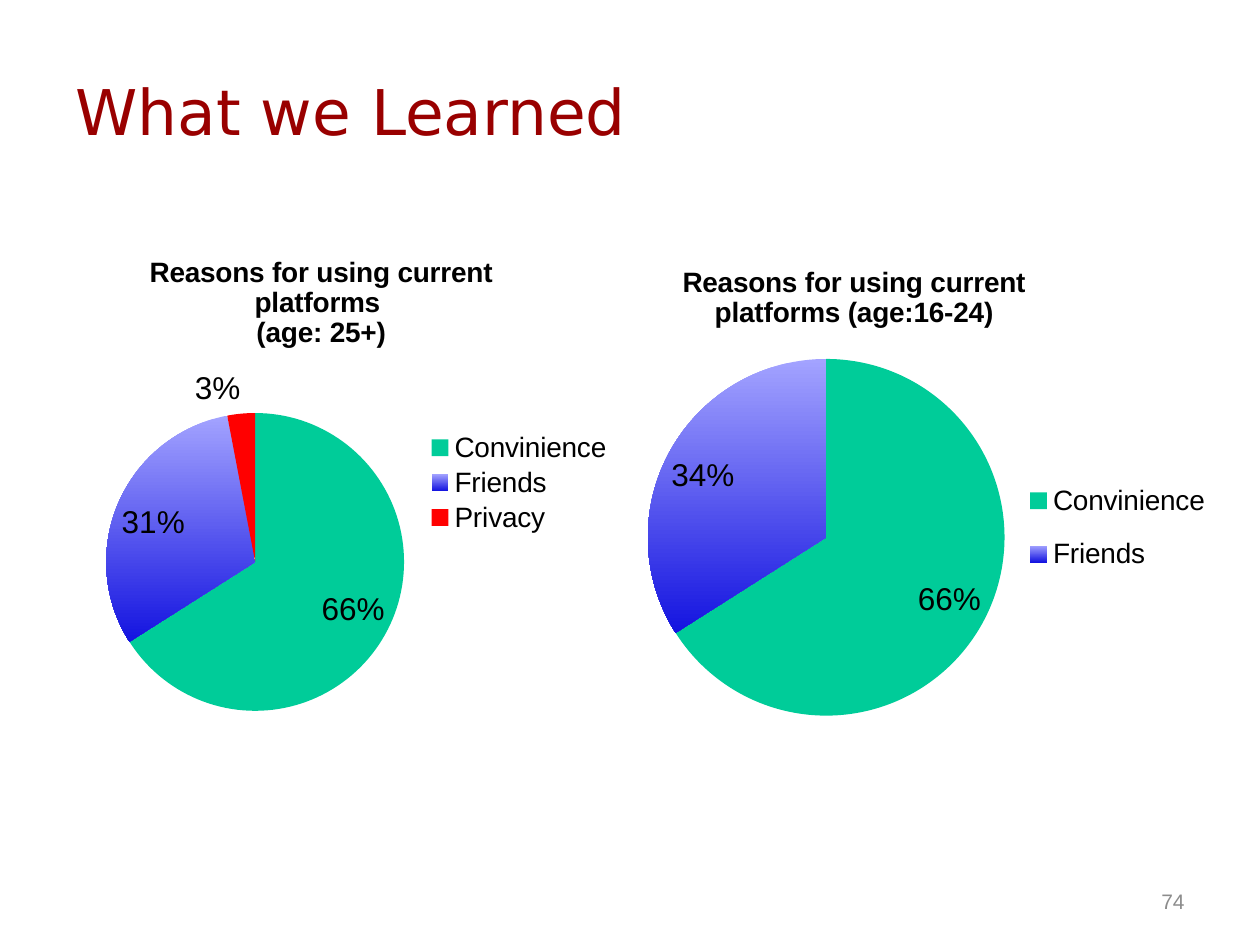
from dataclasses import dataclass
from typing import Optional

from lxml.etree import SubElement
from pptx import Presentation
from pptx.chart.data import CategoryChartData
from pptx.dml.color import RGBColor
from pptx.enum.chart import XL_CHART_TYPE, XL_LABEL_POSITION, XL_LEGEND_POSITION
from pptx.enum.text import MSO_ANCHOR, PP_ALIGN
from pptx.oxml.ns import qn
from pptx.util import Pt


@dataclass
class Frame:
    """Part of a chart, as fractions of the chart's size."""
    x: float
    y: float
    w: Optional[float] = None
    h: Optional[float] = None


@dataclass
class Pie:
    left: float
    top: float
    width: float
    title: str
    shares: dict[str, int]
    plot: Frame
    legend: Frame
    title_frame: Optional[Frame] = None


CHART_HEIGHT = 283.7
SOLID_FILLS = {"Convinience": "00CC99", "Privacy": "FF0000"}
FRIENDS_GRADIENT = ("A3A3FF", "1414E0")

PIES = [
    Pie(12.2, 133.9, 342.7, "Reasons for using current platforms \n(age: 25+)",
        {"Convinience": 66, "Friends": 31, "Privacy": 3},
        plot=Frame(0.14, 0.36, 0.5, 0.6), legend=Frame(0.67, 0.39, 0.32, 0.22)),
    Pie(360, 139.7, 339.8, "Reasons for using current platforms (age:16-24)",
        {"Convinience": 66, "Friends": 34},
        plot=Frame(0.03, 0.23, 0.6, 0.72), legend=Frame(0.66, 0.44, 0.32, 0.26),
        title_frame=Frame(0.08, 0.03)),
]


def color(value: str) -> RGBColor:
    return RGBColor.from_string(value)


def set_layout(element, frame: Frame, inner: bool = False) -> None:
    """Give a chart title, legend or plot area a fixed place."""
    for old in element.findall(qn("c:layout")):
        element.remove(old)
    before = {qn("c:tx"), qn("c:legendPos"), qn("c:legendEntry")}
    layout = element.makeelement(qn("c:layout"))
    element.insert(sum(child.tag in before for child in element), layout)
    manual = SubElement(layout, qn("c:manualLayout"))
    settings = {"layoutTarget": "inner" if inner else None,
                "xMode": "edge", "yMode": "edge",
                "x": frame.x, "y": frame.y, "w": frame.w, "h": frame.h}
    for name, value in settings.items():
        if value is not None:
            SubElement(manual, qn(f"c:{name}")).set("val", str(value))


def fill_slice(fill, category: str) -> None:
    if category in SOLID_FILLS:
        fill.solid()
        fill.fore_color.rgb = color(SOLID_FILLS[category])
        return
    fill.gradient()
    fill.gradient_angle = 270
    for stop, shade in zip(fill.gradient_stops, FRIENDS_GRADIENT):
        stop.color.rgb = color(shade)


def style_font(font, size: float, value: str = "000000", name: str = "Arial",
               bold: bool = False) -> None:
    font.size, font.name, font.bold = Pt(size), name, bold
    font.color.rgb = color(value)


def add_pie(s, pie: Pie) -> None:
    data = CategoryChartData()
    data.categories = list(pie.shares)
    data.add_series("Series 1", list(pie.shares.values()))
    chart = s.shapes.add_chart(
        XL_CHART_TYPE.PIE, Pt(pie.left), Pt(pie.top),
        Pt(pie.width), Pt(CHART_HEIGHT), data).chart
    style_font(chart.font, 10)

    title = chart.chart_title
    title.text_frame.text = pie.title
    for p in title.text_frame.paragraphs:
        style_font(p.font, 16, bold=True)
    if pie.title_frame:
        set_layout(title._element, pie.title_frame)

    chart.has_legend = True
    legend = chart.legend
    legend.position = XL_LEGEND_POSITION.RIGHT
    legend.include_in_layout = False
    style_font(legend.font, 16)
    set_layout(legend._element, pie.legend)

    plot = chart.plots[0]
    plot.vary_by_categories = True
    set_layout(plot._element.getparent(), pie.plot, inner=True)
    series = plot.series[0]
    for i, category in enumerate(pie.shares):
        fill_slice(series.points[i].format.fill, category)
    labels = series.data_labels
    labels.show_value = False
    labels.show_percentage = True
    labels.number_format = "0%"
    labels.number_format_is_linked = False
    labels.position = XL_LABEL_POSITION.BEST_FIT
    style_font(labels.font, 18)


def add_title(s, text: str) -> None:
    sp = s.shapes.title
    sp.left, sp.top, sp.width, sp.height = Pt(36), Pt(18), Pt(648), Pt(90)
    tf = sp.text_frame
    tf.text = text
    tf.vertical_anchor = MSO_ANCHOR.MIDDLE
    p = tf.paragraphs[0]
    p.alignment = PP_ALIGN.LEFT
    style_font(p.font, 36, "990000", "DejaVu Sans")


def add_slide_number(s, number: str) -> None:
    tf = s.shapes.add_textbox(Pt(516), Pt(500.5), Pt(168), Pt(28.75)).text_frame
    tf.word_wrap = True
    tf.vertical_anchor = MSO_ANCHOR.MIDDLE
    p = tf.paragraphs[0]
    p.text = number
    p.alignment = PP_ALIGN.RIGHT
    style_font(p.font, 12, "8C8C8C")


def main() -> None:
    prs = Presentation()
    prs.slide_width, prs.slide_height = Pt(720), Pt(540)
    s = prs.slides.add_slide(prs.slide_layouts[5])
    add_title(s, "What we Learned")
    add_slide_number(s, "74")
    for pie in PIES:
        add_pie(s, pie)
    prs.save("out.pptx")


if __name__ == "__main__":
    main()
